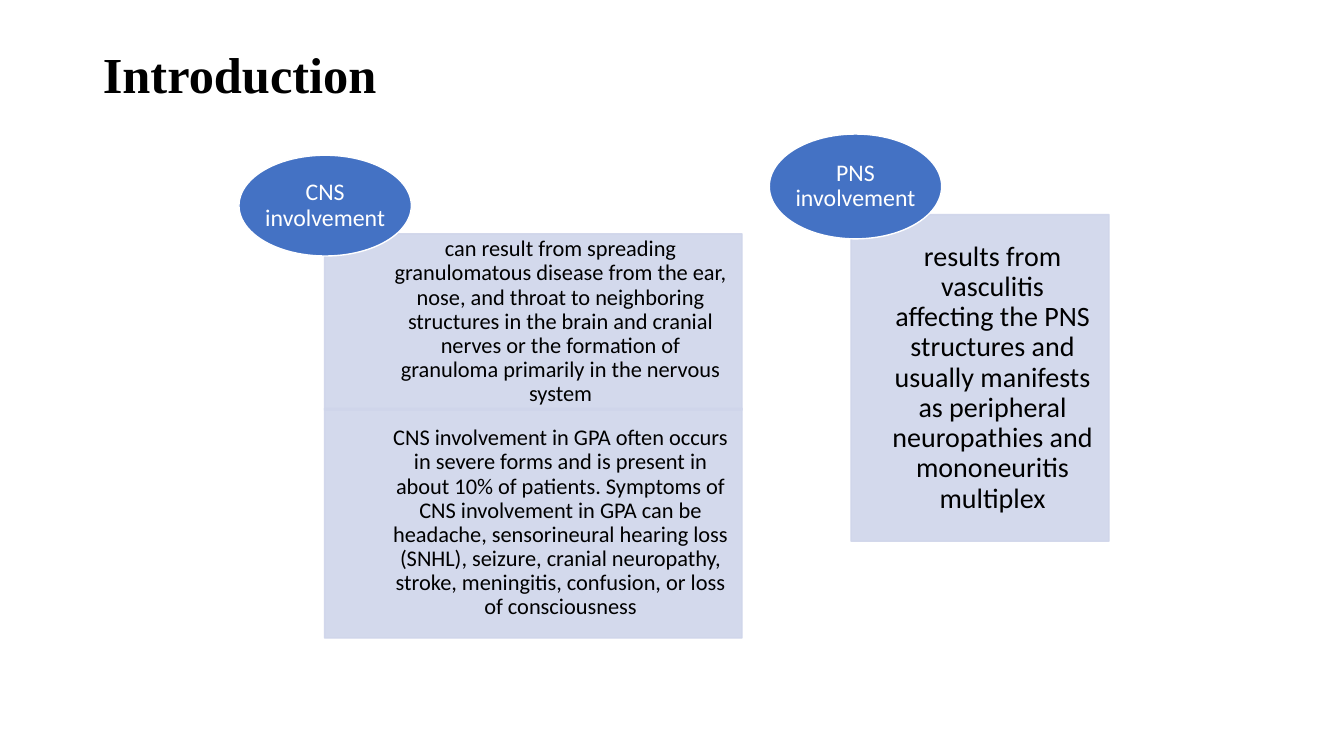
from lxml.etree import SubElement
from pptx import Presentation
from pptx.dml.color import RGBColor
from pptx.enum.shapes import MSO_SHAPE
from pptx.enum.text import MSO_ANCHOR, MSO_AUTO_SIZE, PP_ALIGN
from pptx.oxml.ns import qn
from pptx.util import Inches, Pt

PANEL_OVERLAP = 0.02
OVAL_WIDTH = 1.71

CNS_TEXTS = [
    "can result from spreading granulomatous disease from the ear, nose, and throat to "
    "neighboring structures in the brain and cranial nerves or the formation of granuloma "
    "primarily in the nervous system",
    "CNS involvement in GPA often occurs in severe forms and is present in about 10% of "
    "patients. Symptoms of CNS involvement in GPA can be headache, sensorineural hearing "
    "loss (SNHL), seizure, cranial neuropathy, stroke, meningitis, confusion, or loss of "
    "consciousness",
]
PNS_TEXT = (
    "results from vasculitis affecting the PNS structures and usually manifests as "
    "peripheral neuropathies and mononeuritis multiplex"
)


def set_color(color_format, color):
    """Apply a hex colour string to a colour format."""
    color_format.rgb = RGBColor.from_string(color)


def set_translucent(shape, percent):
    """Make the fill and line of a shape partly transparent."""
    for color_element in shape._element.spPr.iter(qn("a:srgbClr")):
        SubElement(color_element, qn("a:alpha"), val=str(percent * 1000))


def style_text(text_frame, text, font_name, size, color, alignment, insets):
    """Fill a text frame with one uniformly formatted paragraph."""
    text_frame.text = text
    text_frame.word_wrap = True
    text_frame.auto_size = MSO_AUTO_SIZE.NONE
    text_frame.vertical_anchor = MSO_ANCHOR.MIDDLE
    (text_frame.margin_left, text_frame.margin_top,
     text_frame.margin_right, text_frame.margin_bottom) = map(Inches, insets)
    paragraph = text_frame.paragraphs[0]
    paragraph.alignment = alignment
    paragraph.line_spacing = 0.9
    paragraph.font.name = font_name
    paragraph.font.size = Pt(size)
    set_color(paragraph.font.color, color)


def add_label_shape(slide, kind, box, fill, line, text, size, color, insets):
    """Add a filled, outlined shape with centred text."""
    shape = slide.shapes.add_shape(kind, *map(Inches, box))
    shape.shadow.inherit = False
    shape.fill.solid()
    set_color(shape.fill.fore_color, fill)
    set_color(shape.line.color, line)
    shape.line.width = Pt(1)
    style_text(shape.text_frame, text, "Calibri", size, color, PP_ALIGN.CENTER, insets)
    return shape


def add_title(slide, box, text):
    """Place and format the slide title."""
    title = slide.shapes.title
    title.left, title.top, title.width, title.height = map(Inches, box)
    style_text(title.text_frame, text, "Times New Roman", 36, "000000",
               PP_ALIGN.LEFT, (0.1, 0.05, 0.1, 0.05))
    title.text_frame.paragraphs[0].font.bold = True


def add_involvement(slide, box, heading, oval_height, panel_box, panels, size, insets):
    """Stack text panels in a box, with a heading oval at its top left corner."""
    left, top, width = box
    panel_left, panel_top = panel_box
    panel_top += top
    for text, height in panels:
        panel = add_label_shape(
            slide, MSO_SHAPE.RECTANGLE,
            (left + panel_left, panel_top, width - panel_left, height),
            "CFD5EA", "CFD5EA", text, size, "000000", insets)
        set_translucent(panel, 90)
        panel_top += height - PANEL_OVERLAP
    add_label_shape(slide, MSO_SHAPE.OVAL, (left, top, OVAL_WIDTH, oval_height),
                    "4472C4", "FFFFFF", heading, 17, "FFFFFF", (0, 0, 0, 0))


def main():
    """Build and save the slide."""
    presentation = Presentation()
    presentation.slide_width = Inches(13.33)
    presentation.slide_height = Inches(7.5)
    slide = presentation.slides.add_slide(presentation.slide_layouts[5])
    add_title(slide, (0.92, 0.4, 11.5, 0.73), "Introduction")
    add_involvement(slide, (2.37, 1.54, 4.99), "CNS involvement", 1, (0.85, 0.78),
                    list(zip(CNS_TEXTS, (1.75, 2.28))), 16, (0.66, 0.12, 0.12, 0.12))
    add_involvement(slide, (7.63, 1.33, 3.37), "PNS involvement", 1.04, (0.81, 0.8),
                    [(PNS_TEXT, 3.24)], 20, (0.41, 0.16, 0.16, 0.16))
    presentation.save("out.pptx")


if __name__ == "__main__":
    main()
